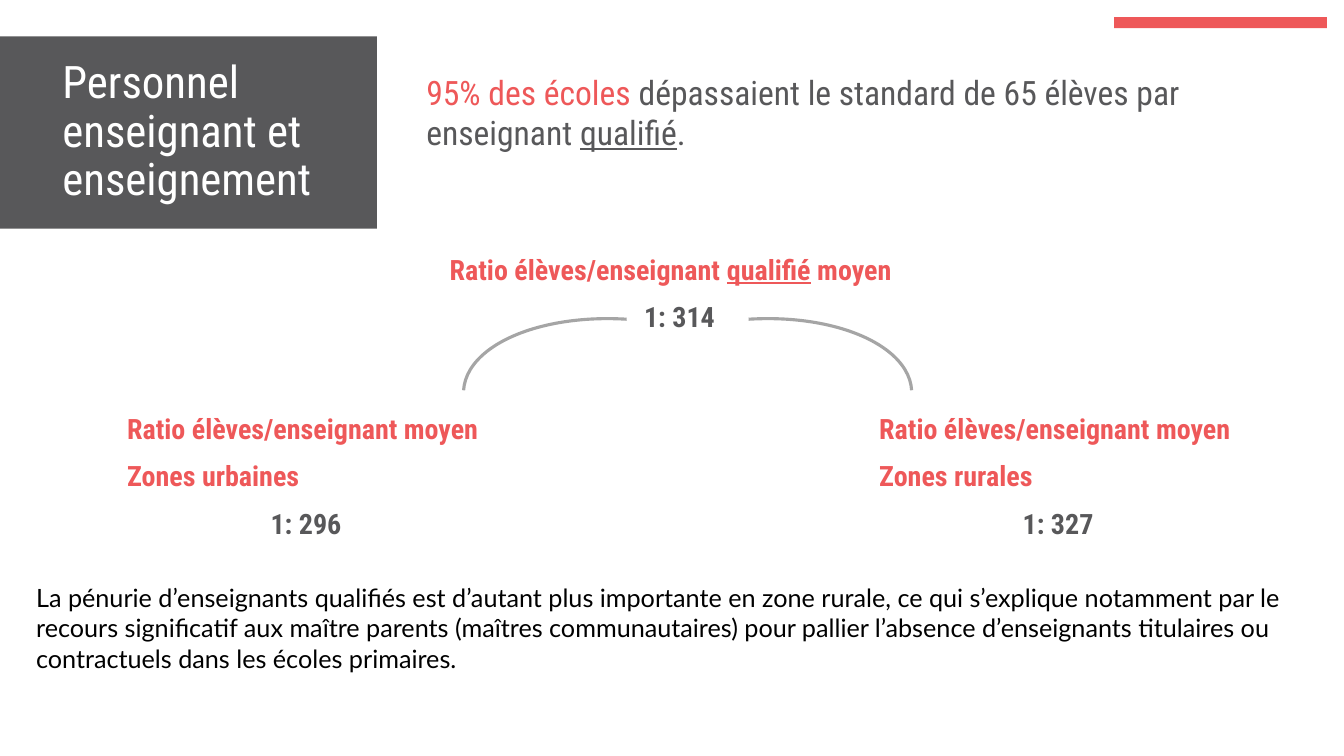
import pptx
import pptx.util
import pptx.dml.color
import pptx.enum.shapes
import pptx.enum.text

# Content: boxes hold paragraphs, paragraphs hold (text, style) runs
TITLE = [[("Personnel enseignant et enseignement", "title")]]
HEADLINE = [[
    ("95% des écoles ", "lead_accent"),
    ("dépassaient le standard de 65 élèves par enseignant ", "lead"),
    ("qualifié", "lead_under"),
    (".", "lead"),
]]
AVERAGE = ([[("Ratio élèves/enseignant ", "label"), ("qualifié", "label_under"),
             (" moyen", "label")]], "1: 314")
ZONES = [("Zones urbaines", "1: 296"), ("Zones rurales", "1: 327")]
ZONE_LABEL = "Ratio élèves/enseignant moyen"
COMMENT = [[(
    "La pénurie d’enseignants qualifiés est d’autant plus importante en zone rurale, "
    "ce qui s’explique notamment par le recours significatif aux maître parents "
    "(maîtres communautaires) pour pallier l’absence d’enseignants titulaires ou "
    "contractuels dans les écoles primaires.", "body")]]

# Theme
RED, GREY, ARC_GREY, WHITE, BLACK = "EE5859", "58585A", "A5A5A5", "FFFFFF", "000000"
HEAD_FONT, BODY_FONT = "Roboto Condensed", "Lato"


def style(color, size, name=HEAD_FONT, **extra):
    return {"color": color, "size": pptx.util.Pt(size), "name": name, **extra}


THEME = {
    "title": style(WHITE, 32),
    "lead_accent": style(RED, 24),
    "lead": style(GREY, 24),
    "lead_under": style(GREY, 24, underline=True),
    "label": style(RED, 20, bold=True),
    "label_under": style(RED, 20, bold=True, underline=True),
    "value": style(GREY, 20, bold=True),
    "body": style(BLACK, 18, BODY_FONT),
}

# Layout, in px (100 to the inch)
EMU_PER_PX = 9144
SLIDE = (1333, 750)
TITLE_PANEL = (-2, 36, 376, 191)
TOP_BAR = (1105, 17, 211, 11)
ZONE_LEFT, ZONE_STEP, ZONE_TOP = 119, 746, 404
ARC_LEFT, ARC_STEP, ARC_TILT = 536, 131, 86.4
RATIO_INSETS = (7, 4)
DEFAULT_INSETS = (10, 5)


def px(*lengths):
    return [pptx.util.Emu(round(n * EMU_PER_PX)) for n in lengths]


def rgb(code):
    return pptx.dml.color.RGBColor.from_string(code)


def add_shape(s, kind, box):
    sp = s.shapes.add_shape(kind, *px(*box))
    sp.shadow.inherit = False
    return sp


def add_block(s, box, color):
    sp = add_shape(s, pptx.enum.shapes.MSO_SHAPE.RECTANGLE, box)
    sp.fill.solid()
    sp.fill.fore_color.rgb = rgb(color)
    sp.line.fill.background()


def add_text(s, box, paragraphs, insets=DEFAULT_INSETS, gap=0):
    tf = s.shapes.add_textbox(*px(*box)).text_frame
    dx, dy = px(*insets)
    frame = {"word_wrap": True, "margin_left": dx, "margin_right": dx,
             "margin_top": dy, "margin_bottom": dy}
    for key, value in frame.items():
        setattr(tf, key, value)
    for i, runs in enumerate(paragraphs):
        p = tf.add_paragraph() if i else tf.paragraphs[0]
        if i and gap:
            p.space_before = pptx.util.Pt(gap)
        for text, name in runs:
            r = p.add_run()
            r.text = text
            for key, value in THEME[name].items():
                if key == "color":
                    r.font.color.rgb = rgb(value)
                else:
                    setattr(r.font, key, value)
    return tf


def add_ratio(s, box, labels, value):
    tf = add_text(s, box, labels + [[(value, "value")]], RATIO_INSETS, gap=10)
    tf.paragraphs[-1].alignment = pptx.enum.text.PP_ALIGN.CENTER


def add_arc(s, left, tilt, flipped):
    sp = add_shape(s, pptx.enum.shapes.MSO_SHAPE.ARC, (left, 240, 161, 314))
    sp.fill.background()
    sp.line.color.rgb = rgb(ARC_GREY)
    sp.line.width = pptx.util.Pt(2.25)
    sp.rotation = tilt
    if flipped:
        sp._element.spPr.xfrm.set("flipH", "1")


def main():
    prs = pptx.Presentation()
    prs.slide_width, prs.slide_height = px(*SLIDE)
    s = prs.slides.add_slide(prs.slide_layouts[6])

    # Title panel and top bar
    add_block(s, TITLE_PANEL, GREY)
    add_block(s, TOP_BAR, RED)
    tf = add_text(s, (52, 45, 311, 173), TITLE)
    tf.vertical_anchor = pptx.enum.text.MSO_ANCHOR.MIDDLE
    tf.paragraphs[0].line_spacing = 0.9

    # Headline and overall ratio
    add_text(s, (413, 66, 868, 91), HEADLINE)
    add_ratio(s, (439, 246, 470, 55), *AVERAGE)

    # One ratio and one arc per zone
    for i, (zone, value) in enumerate(ZONES):
        labels = [[(ZONE_LABEL, "label")], [(zone, "label")]]
        add_ratio(s, (ZONE_LEFT + i * ZONE_STEP, ZONE_TOP, 369, 55), labels, value)
        add_arc(s, ARC_LEFT + i * ARC_STEP, ARC_TILT if i else 360 - ARC_TILT, bool(i))

    # Comment
    add_text(s, (26, 573, 1281, 101), COMMENT)
    prs.save("out.pptx")


if __name__ == "__main__":
    main()
